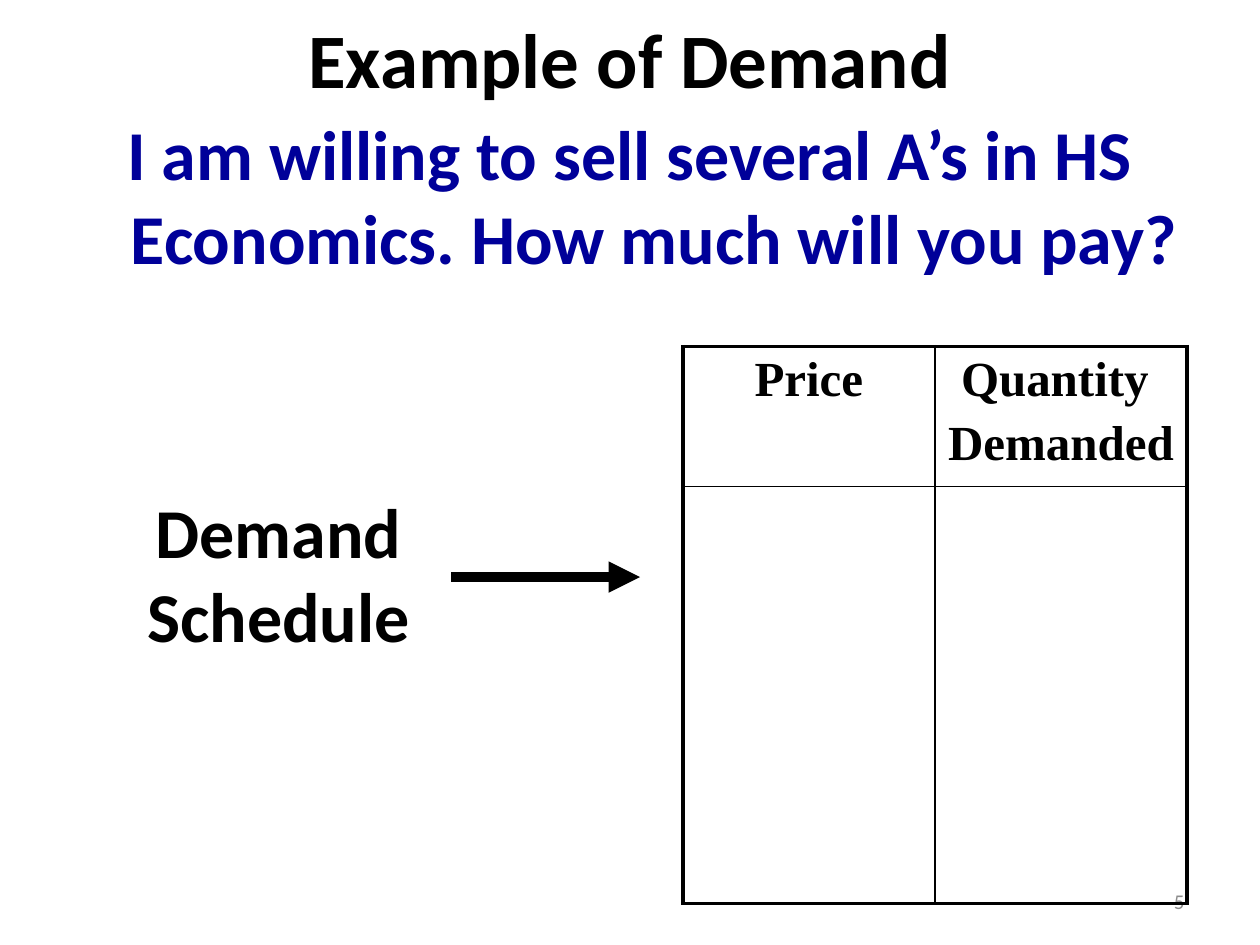
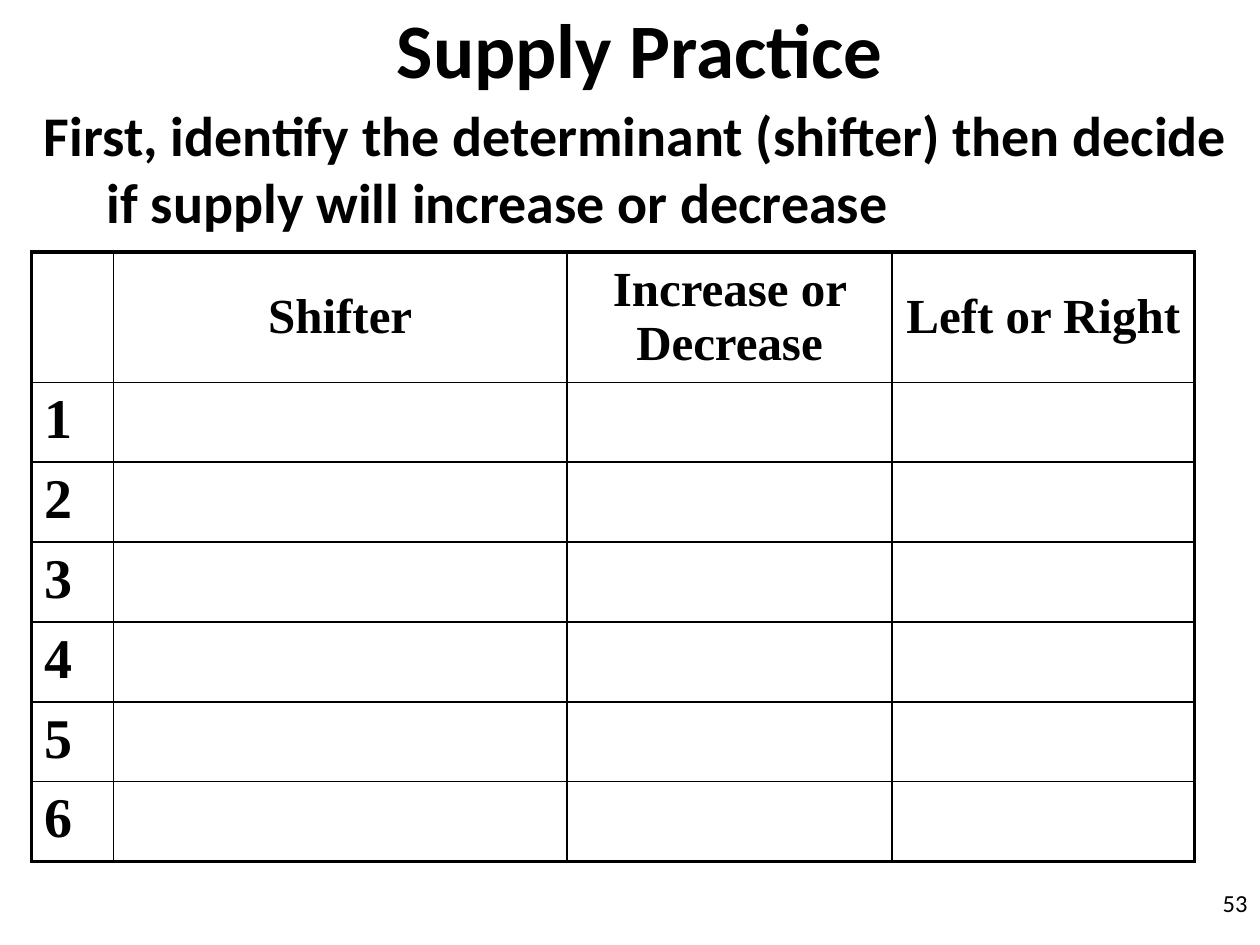
"""Build two economics class slides: a demand schedule and a supply practice grid."""
from dataclasses import dataclass

from lxml import etree
from pptx import Presentation
from pptx.dml import color as dml
from pptx.enum import shapes, text
from pptx.oxml import ns
from pptx.util import Inches, Pt

BLACK, NAVY, GREY = "000000", "000099", "8C8C8C"
SANS, SERIF = "Calibri", "Times New Roman"
LEFT, CENTER, RIGHT = text.PP_ALIGN.LEFT, text.PP_ALIGN.CENTER, text.PP_ALIGN.RIGHT
TOP, MIDDLE = text.MSO_ANCHOR.TOP, text.MSO_ANCHOR.MIDDLE
OUTER, INNER = 2.25, 1


@dataclass
class Label:
    """A text box with one paragraph."""
    at: tuple
    words: str
    size: float
    color: str = BLACK
    bold: bool = True
    align: int = LEFT
    anchor: int = TOP
    hang: float = 0
    before: float = 0
    grow: bool = False


@dataclass
class Grid:
    """A ruled table with a header row."""
    at: tuple
    cols: list
    rows: list
    cells: list
    header_anchor: int = TOP


def rgb(code: str) -> dml.RGBColor:
    """Turn a hex string into a colour."""
    return dml.RGBColor.from_string(code)


def apply(target, values: dict) -> None:
    """Set each named attribute on the target."""
    for name, value in values.items():
        setattr(target, name, value)


def write(p, words: str, size: float, face: str, color: str, bold: bool, **layout) -> None:
    """Put one formatted run into a paragraph."""
    r = p.add_run()
    r.text = words
    apply(r.font, {"name": face, "size": Pt(size), "bold": bold})
    r.font.color.rgb = rgb(color)
    apply(p, layout)


def add_label(s, label: Label) -> None:
    """Draw a text box."""
    tf = s.shapes.add_textbox(*map(Inches, label.at)).text_frame
    fit = text.MSO_AUTO_SIZE.SHAPE_TO_FIT_TEXT if label.grow else text.MSO_AUTO_SIZE.NONE
    apply(tf, {"word_wrap": True, "vertical_anchor": label.anchor, "auto_size": fit})
    p = tf.paragraphs[0]
    write(p, label.words, label.size, SANS, label.color, label.bold,
          alignment=label.align, space_before=Pt(label.before))
    if label.hang:
        pPr = p._p.get_or_add_pPr()
        pPr.set("marL", str(Inches(label.hang)))
        pPr.set("indent", str(-Inches(label.hang)))


def add_title(s, left: float, top: float, words: str) -> None:
    """Draw the slide title."""
    add_label(s, Label((left, top, 8.5, 1.25), words, 44, align=CENTER, anchor=MIDDLE))


def rule_cell(cell, widths: dict) -> None:
    """Draw the four borders of a cell."""
    tcPr = cell._tc.get_or_add_tcPr()
    for i, (side, width) in enumerate(widths.items()):
        ln = etree.Element(ns.qn(f"a:ln{side}"), w=str(Pt(width)))
        fill = etree.SubElement(ln, ns.qn("a:solidFill"))
        etree.SubElement(fill, ns.qn("a:srgbClr"), val=BLACK)
        tcPr.insert(i, ln)


def add_grid(s, grid: Grid) -> None:
    """Draw a table with heavy outer and thin inner rules."""
    n_rows, n_cols = len(grid.rows), len(grid.cols)
    size = sum(grid.cols), sum(grid.rows)
    tbl = s.shapes.add_table(n_rows, n_cols, *map(Inches, grid.at + size)).table
    apply(tbl, {"first_row": False, "horz_banding": False})
    for col, width in zip(tbl.columns, grid.cols):
        col.width = Inches(width)
    for row, height in zip(tbl.rows, grid.rows):
        row.height = Inches(height)
    for i in range(n_rows):
        for j in range(n_cols):
            cell = tbl.cell(i, j)
            cell.fill.background()
            edges = {"L": j == 0, "R": j == n_cols - 1, "T": i == 0, "B": i == n_rows - 1}
            rule_cell(cell, {side: OUTER if edge else INNER for side, edge in edges.items()})
            cell.vertical_anchor = TOP if i else grid.header_anchor
            words = grid.cells[i][j]
            for k, line in enumerate(words.split("\n") if words else []):
                tf = cell.text_frame
                p = tf.add_paragraph() if k else tf.paragraphs[0]
                write(p, line, 32 if i else 28, SERIF, BLACK, True,
                      alignment=LEFT if i else CENTER, space_before=Pt(5.6 if k else 1))


def add_arrow(s, x1: float, y1: float, x2: float, y2: float) -> None:
    """Draw a thick arrow."""
    sp = s.shapes.add_connector(shapes.MSO_CONNECTOR.STRAIGHT, *map(Inches, (x1, y1, x2, y2)))
    sp.line.width = Pt(6)
    sp.line.color.rgb = rgb(BLACK)
    etree.SubElement(sp.line._get_or_add_ln(), ns.qn("a:tailEnd"), type="triangle")
    etree.SubElement(sp._element.spPr, ns.qn("a:effectLst"))


def demand_slide(s) -> None:
    """Show the demand schedule."""
    add_title(s, 0.75, -0.17, "Example of Demand")
    add_label(s, Label((0, 0.83, 10, 4.5),
                       "I am willing to sell several A’s in HS Economics. How much will you pay?",
                       40, NAVY, align=CENTER, hang=0.38, before=2.5))
    add_label(s, Label((7.17, 6.95, 2.33, 0.4), "5", 12, GREY, False, RIGHT, MIDDLE))
    add_grid(s, Grid((5.42, 2.75), [2, 2], [1.11, 3.31],
                     [["Price", "Quantity \nDemanded"], ["", ""]]))
    add_label(s, Label((1, 3.83, 2.42, 1.43), "Demand Schedule", 40,
                       align=CENTER, before=2.5, grow=True))
    add_arrow(s, 3.58, 4.58, 5.08, 4.58)


def supply_slide(s) -> None:
    """Show the supply practice grid."""
    add_title(s, 0.83, -0.25, "Supply Practice")
    add_label(s, Label((0.25, 0.75, 9.75, 1.17),
                       "First, identify the determinant (shifter) then decide "
                       "if supply will increase or decrease", 32, hang=0.5, grow=True))
    add_label(s, Label((7.92, 7, 2.08, 0.5), "53", 14, bold=False, align=RIGHT))
    header = ["", "Shifter", "Increase or Decrease", "Left or Right"]
    questions = [[str(n), "", "", ""] for n in range(1, 7)]
    add_grid(s, Grid((0.25, 2), [0.65, 3.6, 2.58, 2.4], [1.03] + [0.63] * len(questions),
                     [header] + questions, MIDDLE))


def main() -> None:
    """Build and save the presentation."""
    prs = Presentation()
    apply(prs, {"slide_width": Inches(10), "slide_height": Inches(7.5)})
    for build in (demand_slide, supply_slide):
        build(prs.slides.add_slide(prs.slide_layouts[6]))
    prs.save("out.pptx")


if __name__ == "__main__":
    main()
